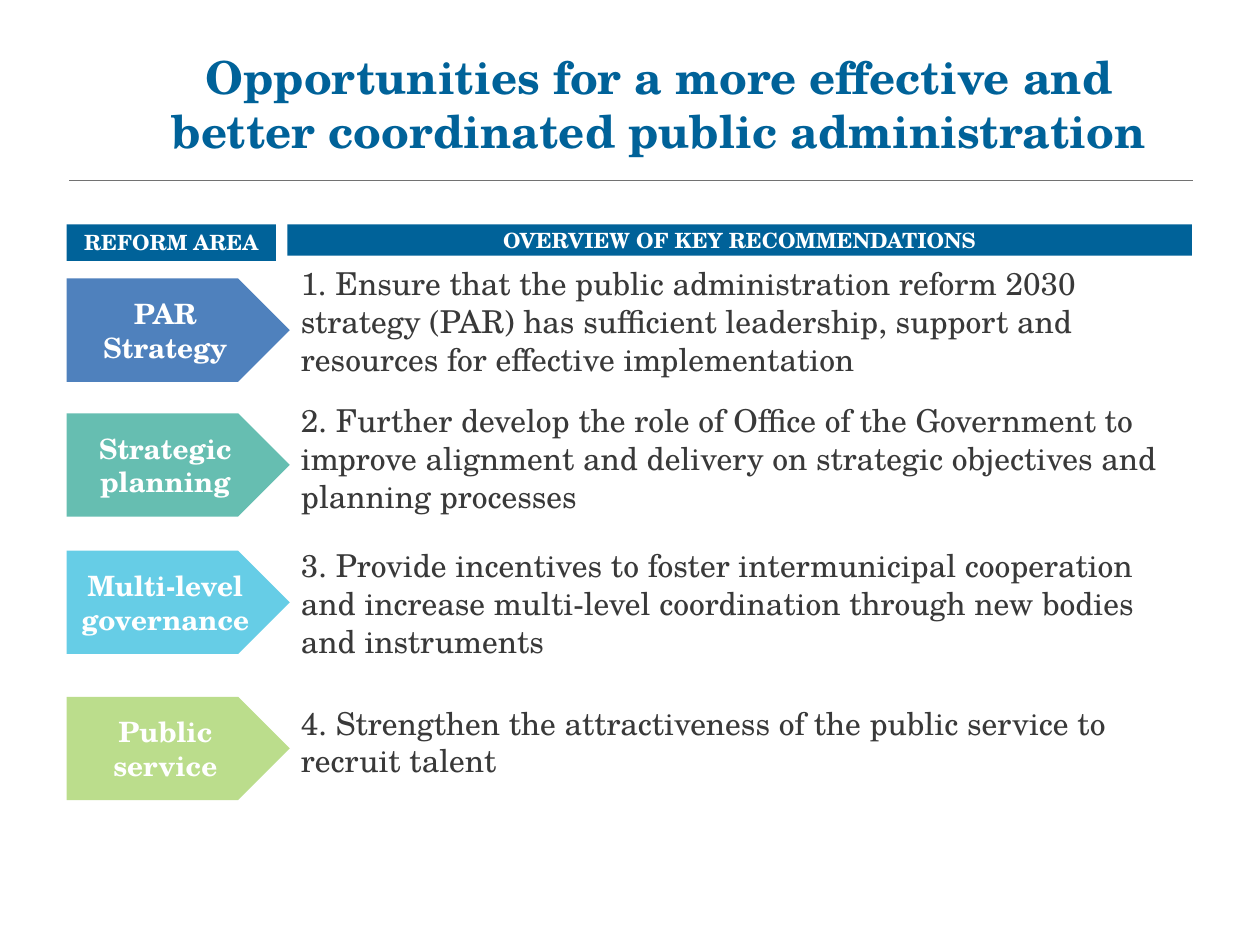
from pptx import Presentation
from pptx.dml.color import RGBColor as RGB
from pptx.enum.shapes import MSO_CONNECTOR as Line, MSO_SHAPE as Kind
from pptx.enum.text import MSO_ANCHOR as Anchor, PP_ALIGN as Align
from pptx.oxml.ns import qn
from pptx.util import Inches, Pt
from lxml.etree import SubElement

FONT = "TeX Gyre Schola"
COLORS = {
    "navy": "006299", "white": "FFFFFF", "text": "393939", "rule": "727272",
    "blue": "4F81BD", "teal": "66BEB1", "sky": "66CDE6", "lime": "BBDD8C",
}
TITLE = "Opportunities for a more effective and better coordinated public administration"
HEADS = [("REFORM AREA", 0.53, 1.66, 0.29),
         ("OVERVIEW OF KEY RECOMMENDATIONS", 2.28, 7.18, 0.25)]
AREAS = [
    ("PAR Strategy", "blue", 2.21, 2.18,
     "Ensure that the public administration reform 2030 strategy (PAR) has "
     "sufficient leadership, support and resources for effective implementation"),
    ("Strategic planning", "teal", 3.28, 3.27,
     "Further develop the role of Office of the Government to improve alignment "
     "and delivery on strategic objectives and planning processes"),
    ("Multi-level governance", "sky", 4.37, 4.42,
     "Provide incentives to foster intermunicipal cooperation and increase "
     "multi-level coordination through new bodies and instruments"),
    ("Public service", "lime", 5.53, 5.52,
     "Strengthen the attractiveness of the public service to recruit talent"),
]
LEFT, RIGHT, HEAD_TOP = 0.53, 2.29, 1.78
TAG_W, TAG_H, NOTE_W, NOTE_H = 1.77, 0.82, 7.18, 0.73


def color(name):
    return RGB.from_string(COLORS[name])


def write(shape, text, size, tone, bold=True, align=Align.CENTER):
    frame = shape.text_frame
    frame.word_wrap = True
    frame.vertical_anchor = Anchor.MIDDLE
    frame.text = text
    para = frame.paragraphs[0]
    para.alignment = align
    font = para.runs[0].font
    font.name, font.size, font.bold = FONT, Pt(size), bold
    font.color.rgb = color(tone)


def add_block(slide, kind, box, fill, text, size):
    shape = slide.shapes.add_shape(kind, *map(Inches, box))
    shape.shadow.inherit = False
    shape.fill.solid()
    shape.fill.fore_color.rgb = color(fill)
    shape.line.fill.background()
    write(shape, text, size, "white")


def add_text(slide, box, *style):
    shape = slide.shapes.add_textbox(*map(Inches, box))
    write(shape, *style)


def add_rule(slide, left, top, width):
    rule = slide.shapes.add_connector(
        Line.STRAIGHT, *map(Inches, (left, top, left + width, top)))
    rule.line.color.rgb = color("rule")
    rule.line.width = Pt(0.5)
    SubElement(rule._element.spPr, qn("a:effectLst"))


def main():
    deck = Presentation()
    deck.slide_width, deck.slide_height = Inches(10), Inches(7.5)
    slide = deck.slides.add_slide(deck.slide_layouts[6])
    add_rule(slide, 0.55, 1.43, 8.92)
    add_text(slide, (1.18, 0.26, 8.11, 1.12), TITLE, 26, "navy")
    for text, left, width, height in HEADS:
        add_block(slide, Kind.RECTANGLE, (left, HEAD_TOP, width, height),
                  "navy", text, 12)
    for num, (area, fill, top, note_top, note) in enumerate(AREAS, 1):
        add_block(slide, Kind.PENTAGON, (LEFT, top, TAG_W, TAG_H), fill, area, 16)
        add_text(slide, (RIGHT, note_top, NOTE_W, NOTE_H),
                 f"{num}. {note}", 18, "text", False, Align.LEFT)
    deck.save("out.pptx")


if __name__ == "__main__":
    main()
